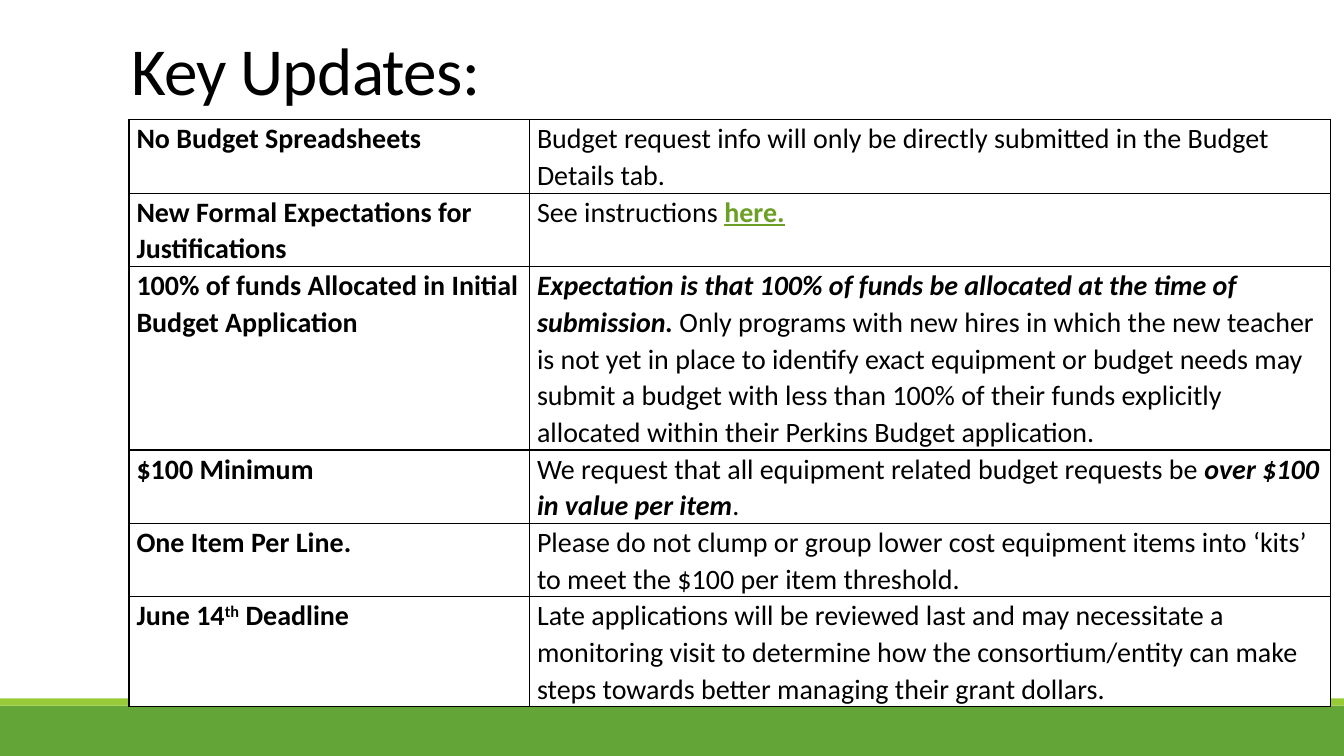
from dataclasses import dataclass

from lxml import etree
from pptx import Presentation
from pptx.dml.color import RGBColor
from pptx.enum.shapes import MSO_SHAPE
from pptx.enum.text import MSO_ANCHOR, MSO_AUTO_SIZE, PP_ALIGN
from pptx.oxml.ns import qn
from pptx.util import Cm, Pt

RECTANGLE = MSO_SHAPE.RECTANGLE
BOTTOM, TOP = MSO_ANCHOR.BOTTOM, MSO_ANCHOR.TOP
NO_AUTOFIT = MSO_AUTO_SIZE.NONE
LEFT = PP_ALIGN.LEFT
TITLE_ONLY = 5


@dataclass(frozen=True)
class Theme:
    font: str = "Calibri"
    text: str = "000000"
    paper: str = "FFFFFF"
    link: str = "6B9F25"
    band: str = "63A537"
    stripe: str = "99CB38"
    title_size: int = 48
    body_size: int = 20
    border_width: int = 1


@dataclass(frozen=True)
class Box:
    left: float
    top: float
    width: float
    height: float

    def lengths(self):
        return Cm(self.left), Cm(self.top), Cm(self.width), Cm(self.height)


THEME = Theme()
PAGE = Box(0, 0, 33.87, 19.05)
FOOTER = Box(0, 17.6, PAGE.width, 1.45)
TITLE = Box(3.05, 0.79, 27.94, 2.1)
TABLE = Box(3.25, 3.02, 30.28, 14.72)
LABEL_SHARE = 1 / 3

# Each update: lines of text it needs, label spans, detail spans.
# A span is its text and its style: "", "bold", "super", "strong" or "link".
UPDATES = [
    (2, [("No Budget Spreadsheets", "bold")],
     [("Budget request info will only be directly submitted in the Budget "
       "Details tab.", "")]),
    (2, [("New Formal Expectations for Justifications", "bold")],
     [("See instructions ", ""), ("here.", "link")]),
    (5, [("100% of funds Allocated in Initial Budget Application", "bold")],
     [("Expectation is that 100% of funds be allocated at the time of "
       "submission.", "strong"),
      (" Only programs with new hires in which the new teacher is not yet in "
       "place to identify exact equipment or budget needs may submit a budget "
       "with less than 100% of their funds explicitly allocated within their "
       "Perkins Budget application.", "")]),
    (2, [("$100 Minimum", "bold")],
     [("We request that all equipment related budget requests be ", ""),
      ("over $100 in value per item", "strong"), (".", "")]),
    (2, [("One Item Per Line.", "bold")],
     [("Please do not clump or group lower cost equipment items into ‘kits’ "
       "to meet the $100 per item threshold.", "")]),
    (3, [("June 14", "bold"), ("th", "super"), (" Deadline", "bold")],
     [("Late applications will be reviewed last and may necessitate a "
       "monitoring visit to determine how the consortium/entity can make "
       "steps towards better managing their grant dollars.", "")]),
]


def color(value):
    return RGBColor.from_string(value)


def add_span(para, text, size, style=""):
    span = para.add_run()
    span.text = text
    font = span.font
    font.name, font.size = THEME.font, Pt(size)
    font.bold = style != ""
    font.italic = style == "strong"
    font.underline = style == "link"
    font.color.rgb = color(THEME.link if style == "link" else THEME.text)
    if style == "super":
        span._r.get_or_add_rPr().set("baseline", "30000")
    return span


def add_borders(cell):
    properties = cell._tc.get_or_add_tcPr()
    for side in ("lnL", "lnR", "lnT", "lnB"):
        line = etree.SubElement(properties, qn(f"a:{side}"),
                                w=str(Pt(THEME.border_width)))
        fill = etree.SubElement(line, qn("a:solidFill"))
        etree.SubElement(fill, qn("a:srgbClr"), val=THEME.text)


def fill_cell(cell, spans):
    add_borders(cell)
    cell.fill.solid()
    cell.fill.fore_color.rgb = color(THEME.paper)
    cell.margin_left = cell.margin_right = Cm(0.19)
    cell.margin_top = cell.margin_bottom = 0
    cell.vertical_anchor = TOP
    para = cell.text_frame.paragraphs[0]
    para.line_spacing = 1.07
    for text, style in spans:
        add_span(para, text, THEME.body_size, style)


def add_footer(page, box):
    stripe_height = 0.18
    stripe = Box(box.left, box.top, box.width, stripe_height)
    band = Box(box.left, box.top + stripe_height, box.width,
               box.height - stripe_height)
    for part, fill in ((band, THEME.band), (stripe, THEME.stripe)):
        shape = page.shapes.add_shape(RECTANGLE, *part.lengths())
        shape.shadow.inherit = False
        shape.fill.solid()
        shape.fill.fore_color.rgb = color(fill)
        shape.line.fill.background()


def add_title(page, box, text):
    title = page.shapes.title
    title.left, title.top, title.width, title.height = box.lengths()
    frame = title.text_frame
    frame.auto_size = NO_AUTOFIT
    frame.vertical_anchor = BOTTOM
    frame.word_wrap = True
    para = frame.paragraphs[0]
    para.alignment = LEFT
    para.line_spacing = 0.85
    span = add_span(para, text, THEME.title_size)
    span._r.get_or_add_rPr().set("spc", "-50")


def add_updates_table(page, box, updates):
    table = page.shapes.add_table(len(updates), 2, *box.lengths()).table
    table.first_row = table.horz_banding = False
    label_width = box.width * LABEL_SHARE
    table.columns[0].width = Cm(label_width)
    table.columns[1].width = Cm(box.width - label_width)
    # Row heights follow the number of text lines.
    line_height = box.height / sum(lines for lines, _, _ in updates)
    for index, (lines, label, detail) in enumerate(updates):
        table.rows[index].height = Cm(lines * line_height)
        fill_cell(table.cell(index, 0), label)
        fill_cell(table.cell(index, 1), detail)


def main():
    deck = Presentation()
    deck.slide_width, deck.slide_height = Cm(PAGE.width), Cm(PAGE.height)
    page = deck.slides.add_slide(deck.slide_layouts[TITLE_ONLY])
    page.background.fill.solid()
    page.background.fill.fore_color.rgb = color(THEME.paper)
    add_footer(page, FOOTER)
    add_title(page, TITLE, "Key Updates:")
    add_updates_table(page, TABLE, UPDATES)
    deck.save("out.pptx")


if __name__ == "__main__":
    main()
